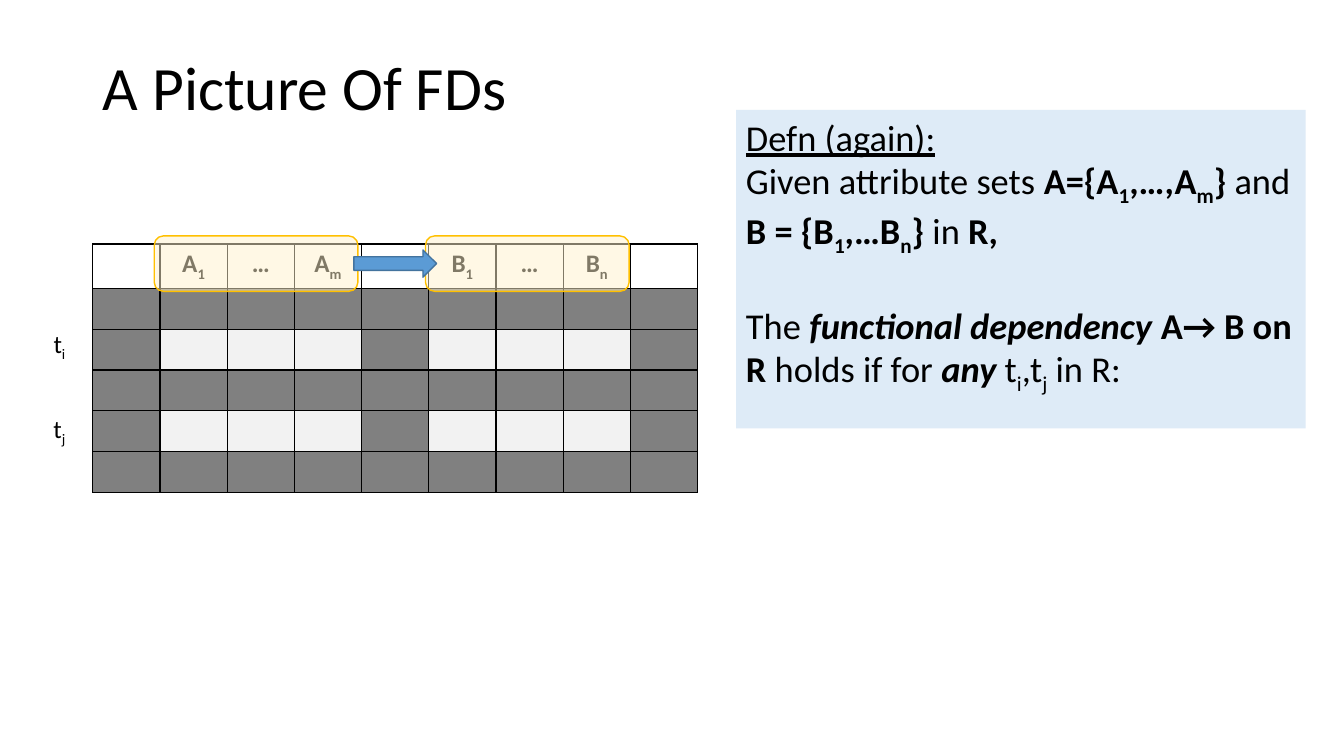
from typing import NamedTuple

from pptx import Presentation
from pptx.dml.color import RGBColor
from pptx.enum.shapes import MSO_SHAPE
from pptx.enum.text import MSO_ANCHOR, PP_ALIGN
from pptx.oxml import parse_xml
from pptx.oxml.ns import nsdecls, qn
from pptx.util import Inches, Pt

RECTANGLE = MSO_SHAPE.RECTANGLE
ROUNDED = MSO_SHAPE.ROUNDED_RECTANGLE
RIGHT_ARROW = MSO_SHAPE.RIGHT_ARROW
TOP, MIDDLE = MSO_ANCHOR.TOP, MSO_ANCHOR.MIDDLE
LEFT, CENTER = PP_ALIGN.LEFT, PP_ALIGN.CENTER

BLACK = RGBColor(0x00, 0x00, 0x00)
GRAY = RGBColor(0x80, 0x80, 0x80)
LIGHT_GRAY = RGBColor(0xF2, 0xF2, 0xF2)
PALE_BLUE = RGBColor(0xDE, 0xEB, 0xF7)
PALE_YELLOW = RGBColor(0xFF, 0xF2, 0xCC)
GOLD = RGBColor(0xFF, 0xC0, 0x00)
BLUE = RGBColor(0x5B, 0x9B, 0xD5)
DARK_BLUE = RGBColor(0x43, 0x73, 0x9E)

FONT = "Calibri"
COLUMN_COUNT, ROW_COUNT = 9, 6
MATCHING_ROWS = (2, 4)
ATTRIBUTE_COLUMNS = (1, 2, 3, 5, 6, 7)


class Piece(NamedTuple):
    text: str
    bold: bool = False
    italic: bool = False
    underline: bool = False
    subscript: bool = False


class Box(NamedTuple):
    left: float
    top: float
    width: float
    height: float

    def lengths(self):
        return [Inches(value) for value in self]


class Block(NamedTuple):
    kind: MSO_SHAPE
    box: Box
    fill: RGBColor
    line: RGBColor | None = None
    opacity: int = 100


def indexed(letter: str, index: str, bold: bool = False) -> list[Piece]:
    """A letter followed by its subscript."""
    return [Piece(letter, bold), Piece(index, bold, subscript=True)]


HEADERS = dict(zip(ATTRIBUTE_COLUMNS, (
    indexed("A", "1", True), [Piece("…", True)], indexed("A", "m", True),
    indexed("B", "1", True), [Piece("…", True)], indexed("B", "n", True),
)))

ROW_LABELS = [
    (Box(0.26, 3.21, 0.66, 0.4), indexed("t", "i")),
    (Box(0.26, 4.05, 0.66, 0.4), indexed("t", "j")),
]

DEFINITION = [
    [Piece("Defn (again):", underline=True)],
    [Piece("Given attribute sets "),
     *indexed("A={A", "1", True), *indexed(",…,A", "m", True), Piece("}", True),
     Piece(" and "),
     *indexed("B = {B", "1", True), *indexed(",…B", "n", True), Piece("} ", True),
     Piece("in "), Piece("R,", True)],
    [Piece("The "), Piece("functional dependency ", True, True),
     Piece("A→ B on R ", True), Piece("holds if for "), Piece("any ", True, True),
     *indexed("t", "i"), *indexed(",t", "j"), Piece(" in R:")],
]

DEFINITION_BLOCK = Block(RECTANGLE, Box(7.3, 1.09, 5.65, 3.16), PALE_BLUE)
HIGHLIGHTS = [
    Block(ROUNDED, Box(left, 2.34, 2.02, 0.55), PALE_YELLOW, GOLD, 50)
    for left in (1.53, 4.22)
]
ARROW = Block(RIGHT_ARROW, Box(3.51, 2.48, 0.82, 0.27), BLUE, DARK_BLUE)


def write(paragraph, pieces: list[Piece], size: float, alignment=LEFT) -> None:
    paragraph.alignment = alignment
    for piece in pieces:
        run = paragraph.add_run()
        run.text = piece.text
        font = run.font
        font.name, font.size, font.color.rgb = FONT, Pt(size), BLACK
        font.bold, font.italic = piece.bold, piece.italic
        font.underline = piece.underline
        if piece.subscript:
            run._r.get_or_add_rPr().set("baseline", "-25000")


def add_block(slide, block: Block):
    shape = slide.shapes.add_shape(block.kind, *block.box.lengths())
    shape.shadow.inherit = False
    shape.fill.solid()
    shape.fill.fore_color.rgb = block.fill
    if block.opacity < 100:
        color = shape._element.spPr.find(qn("a:solidFill"))[0]
        color.append(parse_xml(
            f'<a:alpha {nsdecls("a")} val="{block.opacity * 1000}"/>'))
    if block.line is None:
        shape.line.fill.background()
    else:
        shape.line.color.rgb = block.line
        shape.line.width = Pt(1)
    return shape


def add_borders(cell) -> None:
    properties = cell._tc.get_or_add_tcPr()
    for position, side in enumerate(("lnL", "lnR", "lnT", "lnB")):
        properties.insert(position, parse_xml(
            f'<a:{side} {nsdecls("a")} w="{Pt(1)}"><a:solidFill>'
            f'<a:srgbClr val="{BLACK}"/></a:solidFill></a:{side}>'))


def add_relation(slide) -> None:
    """The table whose light cells are the values that must agree."""
    box = Box(0.92, 2.42, 6, 2.43)
    table = slide.shapes.add_table(ROW_COUNT, COLUMN_COUNT, *box.lengths()).table
    table.first_row = table.horz_banding = False
    for column in table.columns:
        column.width = Inches(box.width / COLUMN_COUNT)
    for row_index, row in enumerate(table.rows):
        row.height = Inches(box.height / ROW_COUNT)
        for column_index, cell in enumerate(row.cells):
            if row_index == 0:
                cell.fill.background()
                write(cell.text_frame.paragraphs[0],
                      HEADERS.get(column_index, []), 18, CENTER)
            else:
                matching = (row_index in MATCHING_ROWS
                            and column_index in ATTRIBUTE_COLUMNS)
                cell.fill.solid()
                cell.fill.fore_color.rgb = LIGHT_GRAY if matching else GRAY
            add_borders(cell)


def add_title(slide) -> None:
    title = slide.shapes.title
    title.left, title.top, title.width, title.height = Box(
        0.92, 0.17, 11.5, 1.45).lengths()
    title.text_frame.vertical_anchor = MIDDLE
    paragraph = title.text_frame.paragraphs[0]
    paragraph.line_spacing = 0.9
    write(paragraph, [Piece("A Picture Of FDs")], 44)


def add_definition(slide) -> None:
    frame = add_block(slide, DEFINITION_BLOCK).text_frame
    frame.word_wrap = True
    frame.vertical_anchor = TOP
    for index, pieces in enumerate(DEFINITION):
        paragraph = frame.add_paragraph() if index else frame.paragraphs[0]
        write(paragraph, pieces, 26)
    paragraph.space_before = Pt(32)


def main() -> None:
    presentation = Presentation()
    presentation.slide_width = Inches(13.33)
    presentation.slide_height = Inches(7.5)
    slide = presentation.slides.add_slide(presentation.slide_layouts[5])
    add_relation(slide)
    add_title(slide)
    for box, pieces in ROW_LABELS:
        frame = slide.shapes.add_textbox(*box.lengths()).text_frame
        frame.word_wrap = True
        write(frame.paragraphs[0], pieces, 18, CENTER)
    add_definition(slide)
    for block in (*HIGHLIGHTS, ARROW):
        add_block(slide, block)
    presentation.save("out.pptx")


if __name__ == "__main__":
    main()
